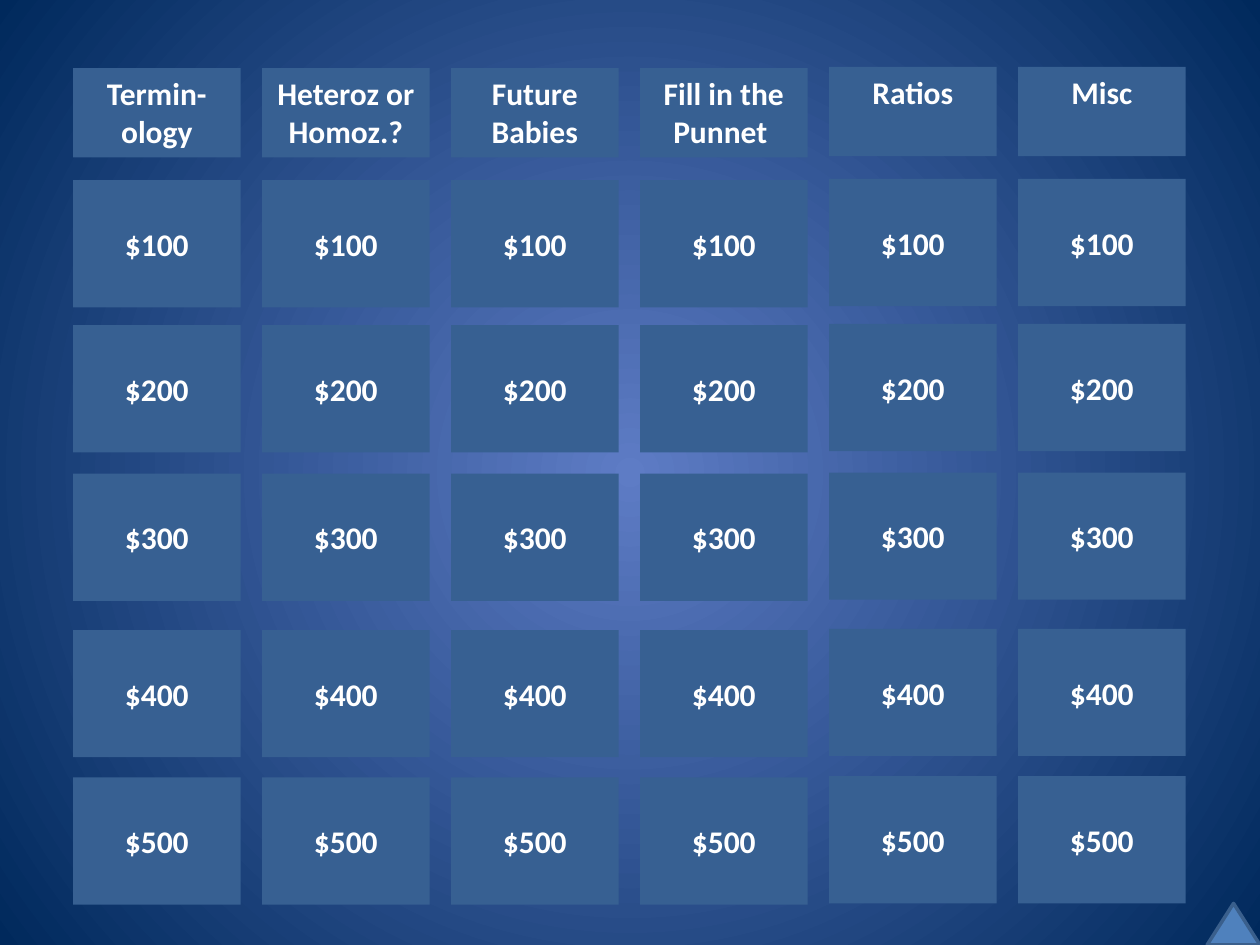
from dataclasses import dataclass

from lxml.etree import SubElement
from pptx import Presentation
from pptx.dml.color import RGBColor
from pptx.enum.shapes import MSO_SHAPE as Shape
from pptx.enum.text import MSO_ANCHOR as Anchor, PP_ALIGN as Align
from pptx.oxml.ns import qn
from pptx.util import Inches, Pt

COLORS = {
    "glow": "5E7CC5",
    "edge": "00295C",
    "tile": "376092",
    "text": "FFFFFF",
    "marker": "4F81BD",
    "marker_line": "3A5F8C",
}

# Board grid, in inches
LEFT, COL_PITCH, TILE_W = 0.58, 1.5, 1.33
HEADER_TOP, HEADER_H = 0.54, 0.71
PRICE_TOPS, PRICE_H = (1.43, 2.58, 3.76, 5.0, 6.17), 1.01
LIFT = 0.01  # the last two columns sit slightly higher

CATEGORIES = (
    "Termin-ology", "Heteroz or Homoz.?", "Future Babies",
    "Fill in the Punnet ", "Ratios", "Misc",
)


@dataclass(frozen=True)
class Tile:
    text: str
    col: int
    top: float
    height: float
    anchor: Anchor

    @property
    def box(self) -> tuple:
        lift = LIFT if self.col >= 4 else 0
        return (LEFT + self.col * COL_PITCH, self.top - lift, TILE_W, self.height)


def color(name: str) -> RGBColor:
    return RGBColor.from_string(COLORS[name])


def add_filled(s, kind: Shape, box: tuple, fill: str):
    sp = s.shapes.add_shape(kind, *map(Inches, box))
    sp.shadow.inherit = False
    sp.fill.solid()
    sp.fill.fore_color.rgb = color(fill)
    return sp


def draw_tile(s, tile: Tile) -> None:
    sp = add_filled(s, Shape.RECTANGLE, tile.box, "tile")
    sp.line.fill.background()
    tf = sp.text_frame
    tf.word_wrap = True
    tf.vertical_anchor = tile.anchor
    p = tf.paragraphs[0]
    p.text = tile.text
    p.alignment = Align.CENTER
    p.font.name, p.font.size, p.font.bold = "Calibri", Pt(18), True
    p.font.color.rgb = color("text")


def draw_background(s) -> None:
    fill = s.background.fill
    fill.gradient()
    for stop, name in zip(fill.gradient_stops, ("glow", "edge")):
        stop.color.rgb = color(name)
    # Turn the linear gradient into a circular one from the centre
    grad = s.element.find(".//" + qn("a:gradFill"))
    grad.remove(grad.find(qn("a:lin")))
    circle = SubElement(grad, qn("a:path"), path="circle")
    SubElement(circle, qn("a:fillToRect"), dict.fromkeys("ltrb", "50000"))


def main() -> None:
    prs = Presentation()
    prs.slide_width, prs.slide_height = Inches(10), Inches(7.5)
    s = prs.slides.add_slide(prs.slide_layouts[6])
    draw_background(s)

    # Price tiles, row by row
    for row, top in enumerate(PRICE_TOPS, start=1):
        for col in range(len(CATEGORIES)):
            draw_tile(s, Tile(f"${row * 100}", col, top, PRICE_H, Anchor.MIDDLE))

    # Category headers
    for col, name in enumerate(CATEGORIES):
        draw_tile(s, Tile(name, col, HEADER_TOP, HEADER_H, Anchor.TOP))

    # Corner triangle
    marker = add_filled(s, Shape.ISOSCELES_TRIANGLE, (9.58, 7.17, 0.42, 0.33), "marker")
    marker.line.color.rgb = color("marker_line")
    marker.line.width = Pt(2)

    prs.save("out.pptx")


if __name__ == "__main__":
    main()
